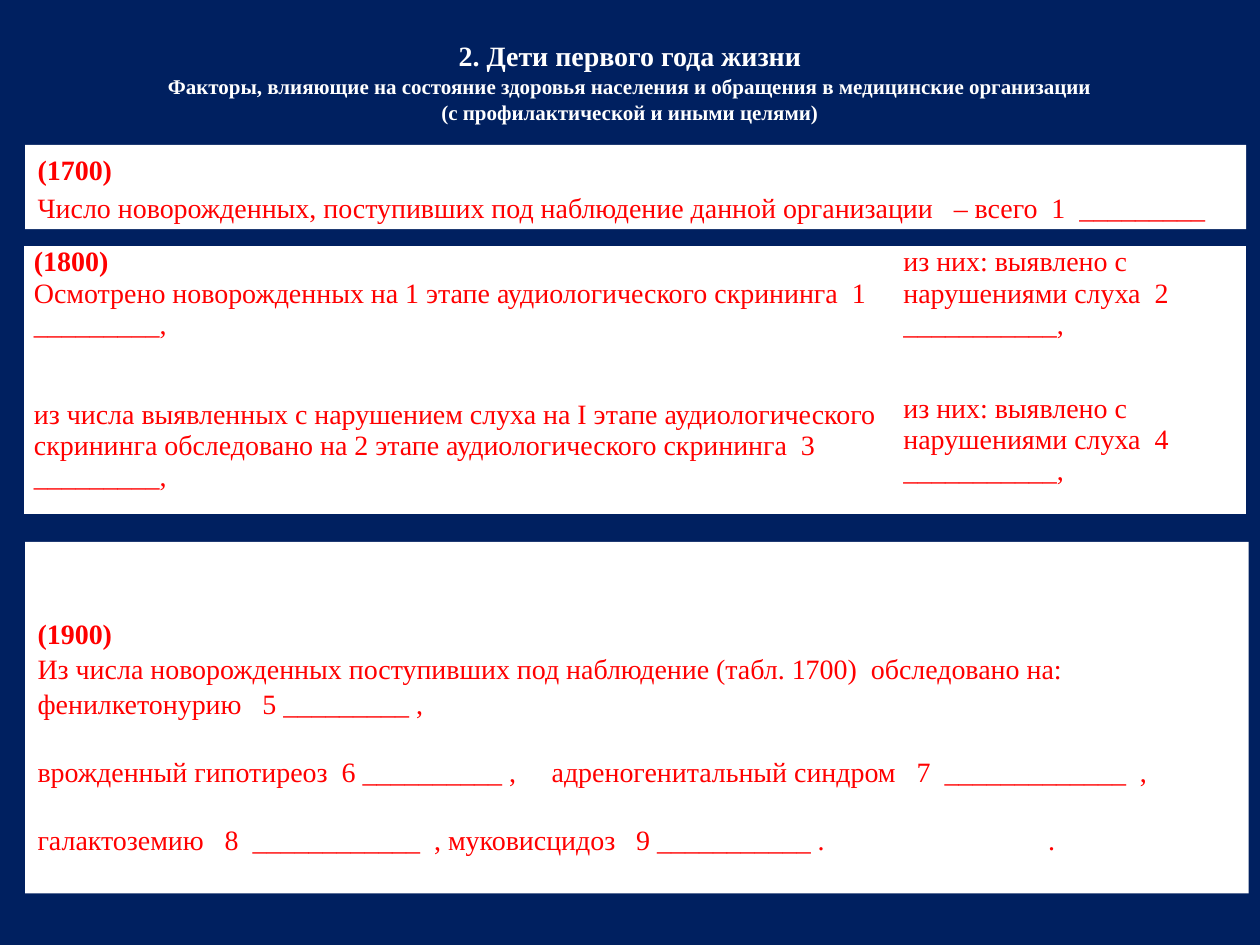
from dataclasses import dataclass

from lxml.etree import SubElement
from pptx import Presentation
from pptx.dml.color import RGBColor as RGB
from pptx.enum.shapes import MSO_SHAPE as Shape
from pptx.enum.text import MSO_ANCHOR as Anchor, PP_ALIGN as Align
from pptx.oxml.ns import qn
from pptx.util import Inches, Pt


@dataclass(frozen=True)
class Theme:
    navy: RGB = RGB(0x00, 0x20, 0x60)
    white: RGB = RGB(0xFF, 0xFF, 0xFF)
    red: RGB = RGB(0xFF, 0x00, 0x00)
    font: str = "Times New Roman"
    body: int = 16
    small: int = 12
    lead: float = 1.04


THEME = Theme()


def paint(part, color):
    part.fill.solid()
    part.fill.fore_color.rgb = color


def write(frame, lines, color=THEME.red, align=Align.LEFT, lead=None):
    """Fill frame with lines, each given as (text, size, bold, space before)."""
    frame.word_wrap = True
    for i, (text, size, bold, gap) in enumerate(lines):
        para = frame.add_paragraph() if i else frame.paragraphs[0]
        para.text = text
        para.alignment = align
        para.space_before = Pt(gap)
        if lead:
            para.line_spacing = lead
        for run in para.runs:
            font = run.font
            font.name, font.size, font.bold = THEME.font, Pt(size), bold
            font.color.rgb = color


def head(text):
    return text, THEME.body, True, 0


def line(text, gap=0):
    return text, THEME.body, False, gap


def set_tab(para, pos):
    stops = SubElement(para._p.get_or_add_pPr(), qn("a:tabLst"))
    SubElement(stops, qn("a:tab"), pos=str(Inches(pos)), algn="l")


def add_title(slide, box):
    frame = slide.shapes.add_textbox(*map(Inches, box)).text_frame
    write(frame, [
        head("2. Дети первого года жизни"),
        ("Факторы, влияющие на состояние здоровья населения "
         "и обращения в медицинские организации", THEME.small, True, 0),
        ("(с профилактической и иными целями)", THEME.small, True, 0),
    ], THEME.white, Align.CENTER, THEME.lead)


def add_panel(slide, box, lines, anchor):
    panel = slide.shapes.add_shape(Shape.RECTANGLE, *map(Inches, box))
    panel.shadow.inherit = False
    paint(panel, THEME.white)
    panel.line.fill.background()
    frame = panel.text_frame
    frame.vertical_anchor = anchor
    write(frame, lines, lead=THEME.lead)
    return frame


def add_intake(slide, box):
    """Section 1700."""
    add_panel(slide, box, [
        head("(1700)"),
        line("Число новорожденных, поступивших под наблюдение данной "
             "организации   – всего  1  _________", 2),
    ], Anchor.TOP)


def add_hearing(slide, box):
    """Section 1800: two screening stages and their findings."""
    left, top, width, height = map(Inches, box)
    table = slide.shapes.add_table(2, 2, left, top, width, height).table
    table.first_row = table.horz_banding = False
    for col, size in zip(table.columns, (6.9, 2.78)):
        col.width = Inches(size)
    for row, size in zip(table.rows, (0.96, 1.15)):
        row.height = Inches(size)
    found = "из них: выявлено с нарушениями слуха  {} ___________,"
    texts = [
        [head("(1800)"),
         line("Осмотрено новорожденных на 1 этапе аудиологического "
              "скрининга  1 _________,")],
        [line(found.format(2))],
        [line("из числа выявленных с нарушением слуха на I этапе "
              "аудиологического скрининга обследовано на 2 этапе "
              "аудиологического скрининга  3 _________,")],
        [line(found.format(4))],
    ]
    for cell, lines in zip(table.iter_cells(), texts):
        paint(cell, THEME.white)
        cell.margin_left = cell.margin_right = Inches(0.07)
        cell.margin_top = cell.margin_bottom = 0
        write(cell.text_frame, lines)
    table.cell(1, 0).margin_top = Inches(0.25)
    table.cell(1, 1).vertical_anchor = Anchor.MIDDLE


def add_tests(slide, box):
    """Section 1900."""
    gap = 19
    frame = add_panel(slide, box, [
        head("(1900)"),
        line("Из числа новорожденных поступивших под наблюдение "
             "(табл. 1700)  обследовано на: фенилкетонурию   5 _________ ,"),
        line("врожденный гипотиреоз  6 __________ ,\tадреногенитальный "
             "синдром   7  _____________  ,", gap),
        line("галактоземию   8  ____________  , муковисцидоз   "
             "9 ___________ .\t.", gap),
    ], Anchor.MIDDLE)
    frame.margin_top = Inches(0.34)
    for para, pos in zip(frame.paragraphs[2:], (4.08, 8.02)):
        set_tab(para, pos)


def main():
    deck = Presentation()
    deck.slide_width, deck.slide_height = Inches(10), Inches(7.5)
    slide = deck.slides.add_slide(deck.slide_layouts[6])
    paint(slide.background, THEME.navy)
    add_title(slide, (0, 0.25, 10, 0.77))
    add_intake(slide, (0.2, 1.15, 9.69, 0.67))
    add_hearing(slide, (0.2, 1.96, 9.68, 2.11))
    add_tests(slide, (0.2, 4.3, 9.71, 2.79))
    deck.save("out.pptx")


if __name__ == "__main__":
    main()
